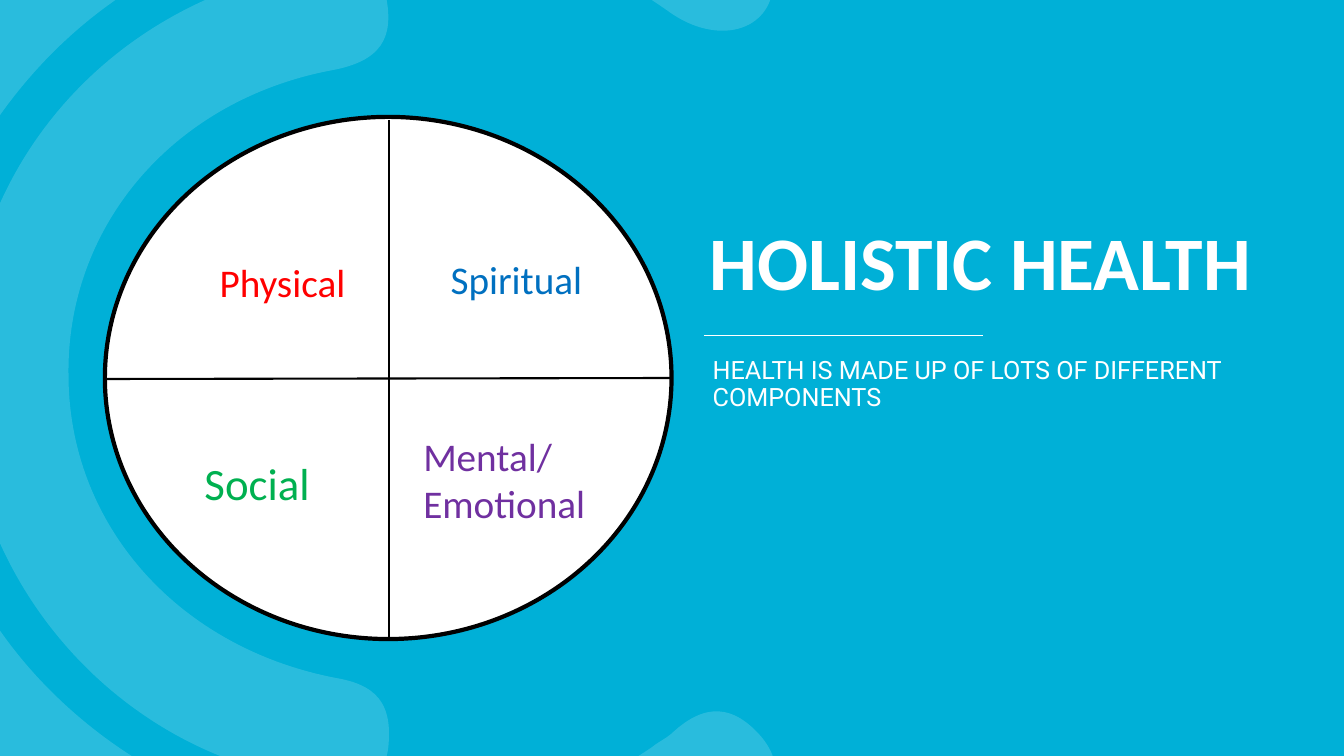
from lxml import etree
from pptx import Presentation
from pptx.dml.color import RGBColor
from pptx.enum.shapes import MSO_CONNECTOR, MSO_SHAPE
from pptx.enum.text import MSO_ANCHOR
from pptx.oxml.ns import qn
from pptx.util import Inches, Pt

STRAIGHT, ELLIPSE, RECTANGLE = MSO_CONNECTOR.STRAIGHT, MSO_SHAPE.OVAL, MSO_SHAPE.RECTANGLE
TOP, BOTTOM = MSO_ANCHOR.TOP, MSO_ANCHOR.BOTTOM

THEME = {
    "sky": "00B0D7", "white": "FFFFFF", "black": "000000",
    "red": "FF0000", "blue": "0070C0", "green": "00B050", "purple": "7030A0",
    "head": "Calibri", "body": "Roboto",
    "title": 54, "label": 28, "large_label": 32, "subtitle": 18,
    "rule": 0.5, "spoke": 1.5, "rim": 3, "swirl_alpha": 16,
}

TEXTS = [
    {"lines": ["HOLISTIC HEALTH"], "at": (6.94, 0.8, 5.8, 2.29), "size": "title",
     "color": "white", "bold": True, "anchor": BOTTOM, "spacing": 0.9},
    {"lines": ["HEALTH IS MADE UP OF LOTS OF DIFFERENT COMPONENTS"],
     "at": (6.97, 3.5, 5.91, 0.52), "size": "subtitle", "font": "body",
     "color": "white", "spacing": 0.9, "before": 10},
    {"lines": ["Physical"], "at": (2.08, 2.51, 1.83, 0.57), "color": "red"},
    {"lines": ["Spiritual"], "at": (4.37, 2.48, 1.83, 0.57), "color": "blue"},
    {"lines": ["Social"], "at": (1.93, 4.47, 1.83, 0.64), "color": "green",
     "size": "large_label"},
    {"lines": ["Mental/", "Emotional"], "at": (4.1, 4.24, 1.83, 1.04), "color": "purple"},
]

SLIDE = (13.33, 7.5)
WHEEL = (1.04, 1.16, 5.62, 5.18)
TITLE_RULE = (6.98, 3.33, 9.75, 3.33)
SPOKES = [(3.86, 1.19, 3.86, 6.34), (6.67, 3.75, 1.04, 3.76)]

SWIRLS = [
    ((-1.89, 3.38), [
        (-1.78, 1.51, -0.82, -0.2, 1.19, -1.22),
        (3.24, -2.24, 5.24, -2.05, 7.14, -0.81),
        (7.38, -0.64, 7.69, -0.49, 7.67, -0.15),
        (7.64, 0.31, 7.12, 0.46, 6.64, 0.12),
        (4.52, -1.39, 1.73, -1.05, 0.16, 0.93),
        (-1.24, 2.68, -1.1, 5.19, 0.44, 6.79),
        (2.04, 8.45, 4.57, 8.71, 6.47, 7.41),
        (6.53, 7.36, 6.62, 7.32, 6.68, 7.26),
        (6.99, 6.98, 7.27, 6.98, 7.56, 7.32),
        (7.86, 7.7, 7.56, 7.92, 7.29, 8.09),
        (5.81, 9.2, 4.15, 9.54, 2.34, 9.07),
        (-0.17, 8.43, -1.87, 6.21, -1.89, 3.38)]),
    ((-0.36, 3.72), [
        (-0.36, 1.7, 1.03, 0.06, 3.06, -0.32),
        (3.37, -0.37, 3.74, -0.49, 3.83, -0.03),
        (3.91, 0.38, 3.78, 0.61, 3.28, 0.7),
        (1.71, 1, 0.66, 2.25, 0.68, 3.72),
        (0.68, 5.19, 1.75, 6.43, 3.35, 6.73),
        (3.8, 6.81, 3.89, 7.05, 3.85, 7.43),
        (3.78, 7.88, 3.43, 7.79, 3.13, 7.75),
        (1.16, 7.49, -0.36, 5.75, -0.36, 3.72)]),
]


def color(name):
    return RGBColor.from_string(THEME[name])


def inches(values):
    return [Inches(value) for value in values]


def paint(fill, name):
    fill.solid()
    fill.fore_color.rgb = color(name)


def bend(shape):
    segments = list(shape._element.iter(qn("a:lnTo")))
    for first, second, end in zip(segments[::3], segments[1::3], segments[2::3]):
        first.tag = qn("a:cubicBezTo")
        for segment in (second, end):
            first.append(segment[0])
            segment.getparent().remove(segment)


def add_swirl(page, start, curves):
    points = [inches(curve[i:i + 2]) for curve in curves for i in (0, 2, 4)]
    builder = page.shapes.build_freeform(*inches(start), scale=1.0)
    builder.add_line_segments(points, close=True)
    swirl = builder.convert_to_shape()
    bend(swirl)
    swirl.shadow.inherit = False
    swirl.line.fill.background()
    paint(swirl.fill, "white")
    tint = swirl._element.spPr.find(".//" + qn("a:srgbClr"))
    etree.SubElement(tint, qn("a:alpha"), val=str(THEME["swirl_alpha"] * 1000))


def add_line(page, ends, name, width):
    line = page.shapes.add_connector(STRAIGHT, *inches(ends))
    paint(line.line.fill, name)
    line.line.width = Pt(THEME[width])
    etree.SubElement(line._element.spPr, qn("a:effectLst"))


def add_panel(page, kind, at, name):
    panel = page.shapes.add_shape(kind, *inches(at))
    panel.shadow.inherit = False
    paint(panel.fill, name)
    panel.line.fill.background()
    return panel


def add_text(page, text):
    frame = page.shapes.add_textbox(*inches(text["at"])).text_frame
    frame.word_wrap = True
    frame.vertical_anchor = text.get("anchor", TOP)
    font_format = {"name": THEME[text.get("font", "head")],
                   "size": Pt(THEME[text.get("size", "label")]),
                   "bold": text.get("bold", False)}
    para_format = {"line_spacing": text.get("spacing", 1.0),
                   "space_before": Pt(text.get("before", 0))}
    for index, line in enumerate(text["lines"]):
        para = frame.add_paragraph() if index else frame.paragraphs[0]
        span = para.add_run()
        span.text = line
        span.font.color.rgb = color(text["color"])
        for target, values in ((span.font, font_format), (para, para_format)):
            for key, value in values.items():
                setattr(target, key, value)


def main():
    deck = Presentation()
    deck.slide_width, deck.slide_height = inches(SLIDE)
    page = deck.slides.add_slide(deck.slide_layouts[6])
    add_panel(page, RECTANGLE, (0, 0, *SLIDE), "sky")
    for start, curves in SWIRLS:
        add_swirl(page, start, curves)
    add_line(page, TITLE_RULE, "white", "rule")
    wheel = add_panel(page, ELLIPSE, WHEEL, "white")
    paint(wheel.line.fill, "black")
    wheel.line.width = Pt(THEME["rim"])
    for spoke in SPOKES:
        add_line(page, spoke, "black", "spoke")
    for text in TEXTS:
        add_text(page, text)
    deck.save("out.pptx")


if __name__ == "__main__":
    main()
